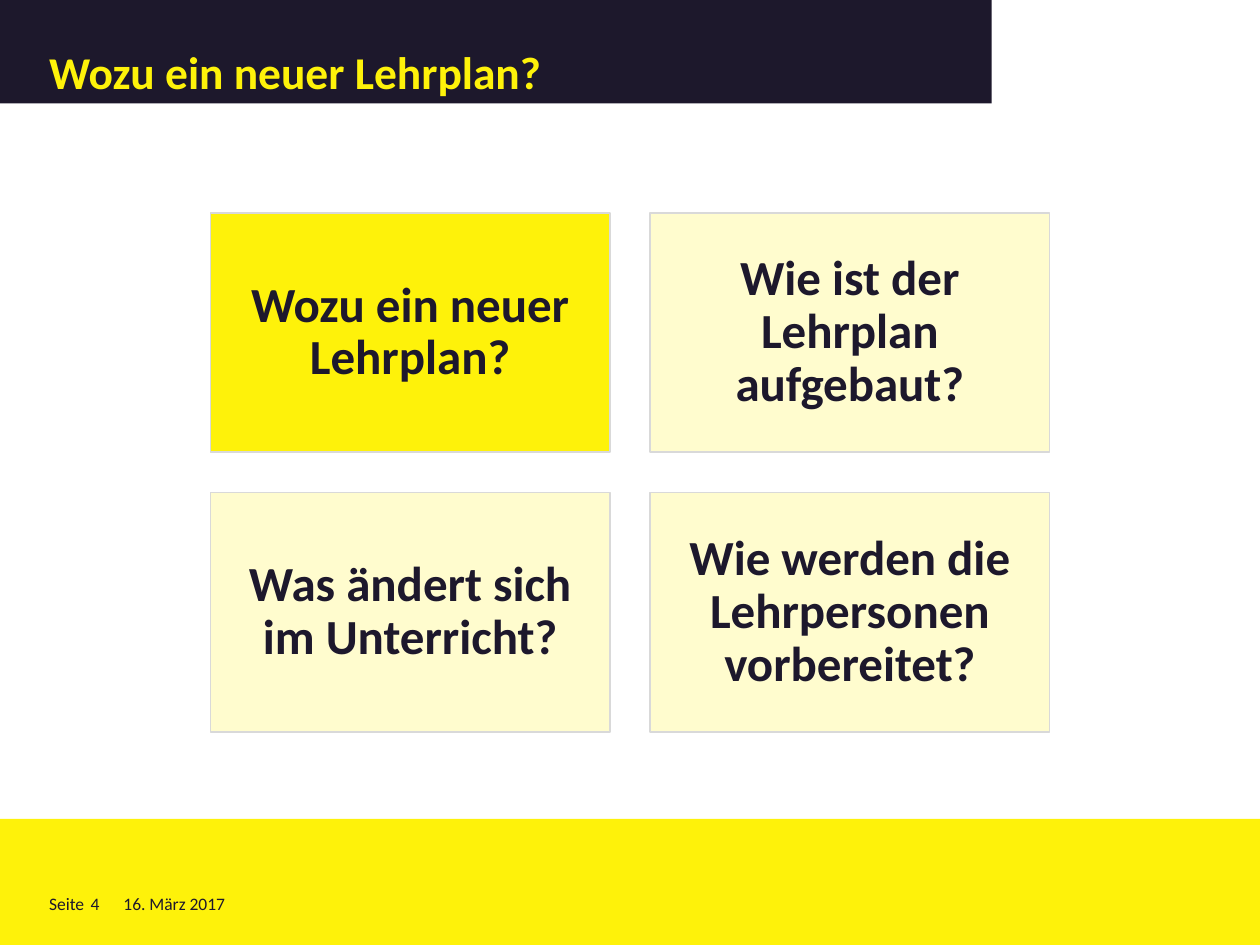
from dataclasses import dataclass
from typing import Optional

import pptx
import pptx.dml.color
import pptx.enum.shapes
import pptx.enum.text
import pptx.util

Inches = pptx.util.Inches
Align = pptx.enum.text.PP_ALIGN
Anchor = pptx.enum.text.MSO_ANCHOR


@dataclass(frozen=True)
class Theme:
    font: str = "Calibri"
    dark: str = "1D182C"
    yellow: str = "FEF20A"
    pale: str = "FFFCCE"
    edge: str = "D9D9D9"
    title: int = 26
    card: int = 28
    foot: int = 10


@dataclass(frozen=True)
class Box:
    left: float
    top: float
    width: float
    height: float


@dataclass(frozen=True)
class Style:
    size: int
    color: str
    bold: bool = False
    align: Align = Align.LEFT
    anchor: Anchor = Anchor.TOP
    pads: tuple[float, float, float, float] = (0, 0, 0, 0)
    lead: float = 1.0


THEME = Theme()


def rgb(code: str) -> pptx.dml.color.RGBColor:
    return pptx.dml.color.RGBColor.from_string(code)


def span(box: Box) -> list[int]:
    return [Inches(n) for n in (box.left, box.top, box.width, box.height)]


def write(shape, text: str, style: Style) -> None:
    frame = shape.text_frame
    frame.word_wrap = True
    frame.vertical_anchor = style.anchor
    (frame.margin_left, frame.margin_top,
     frame.margin_right, frame.margin_bottom) = map(Inches, style.pads)
    para = frame.paragraphs[0]
    para.alignment = style.align
    para.line_spacing = style.lead
    run = para.add_run()
    run.text = text
    run.font.name = THEME.font
    run.font.size = pptx.util.Pt(style.size)
    run.font.bold = style.bold
    run.font.color.rgb = rgb(style.color)


def panel(slide, box: Box, fill: str, edge: Optional[str] = None):
    shape = slide.shapes.add_shape(
        pptx.enum.shapes.MSO_SHAPE.RECTANGLE, *span(box))
    shape.shadow.inherit = False
    shape.fill.solid()
    shape.fill.fore_color.rgb = rgb(fill)
    if edge:
        shape.line.color.rgb = rgb(edge)
        shape.line.width = pptx.util.Pt(1)
    else:
        shape.line.fill.background()
    return shape


def main() -> None:
    deck = pptx.Presentation()
    deck.slide_width, deck.slide_height = Inches(10), Inches(7.5)
    slide = deck.slides.add_slide(deck.slide_layouts[6])

    # Footer band with page number and date
    panel(slide, Box(0, 6.5, 10, 1), THEME.yellow)
    foot = Style(THEME.foot, THEME.dark)
    for left, width, text in ((0.39, 0.35, "Seite"), (0.72, 0.25, "4"),
                              (0.98, 2.28, "16. März 2017")):
        label = slide.shapes.add_textbox(*span(Box(left, 7.09, width, 0.17)))
        write(label, text, foot)

    # Title bar
    title = panel(slide, Box(0, 0, 7.87, 0.82), THEME.dark)
    write(title, "Wozu ein neuer Lehrplan?",
          Style(THEME.title, THEME.yellow, True, anchor=Anchor.BOTTOM,
                pads=(0.39, 0.08, 0.08, 0.04), lead=0.8))

    # Two by two grid of questions, the current one highlighted
    cards = ("Wozu ein neuer Lehrplan?", "Wie ist der Lehrplan aufgebaut?",
             "Was ändert sich im Unterricht?",
             "Wie werden die Lehrpersonen vorbereitet?")
    look = Style(THEME.card, THEME.dark, True, Align.CENTER, Anchor.MIDDLE,
                 (0.12, 0.12, 0.12, 0.12), 0.9)
    wide, high, gap = 3.17, 1.9, 0.32
    for i, text in enumerate(cards):
        row, col = divmod(i, 2)
        box = Box(1.67 + col * (wide + gap), 1.69 + row * (high + gap),
                  wide, high)
        fill = THEME.pale if i else THEME.yellow
        write(panel(slide, box, fill, THEME.edge), text, look)

    deck.save("out.pptx")


if __name__ == "__main__":
    main()
